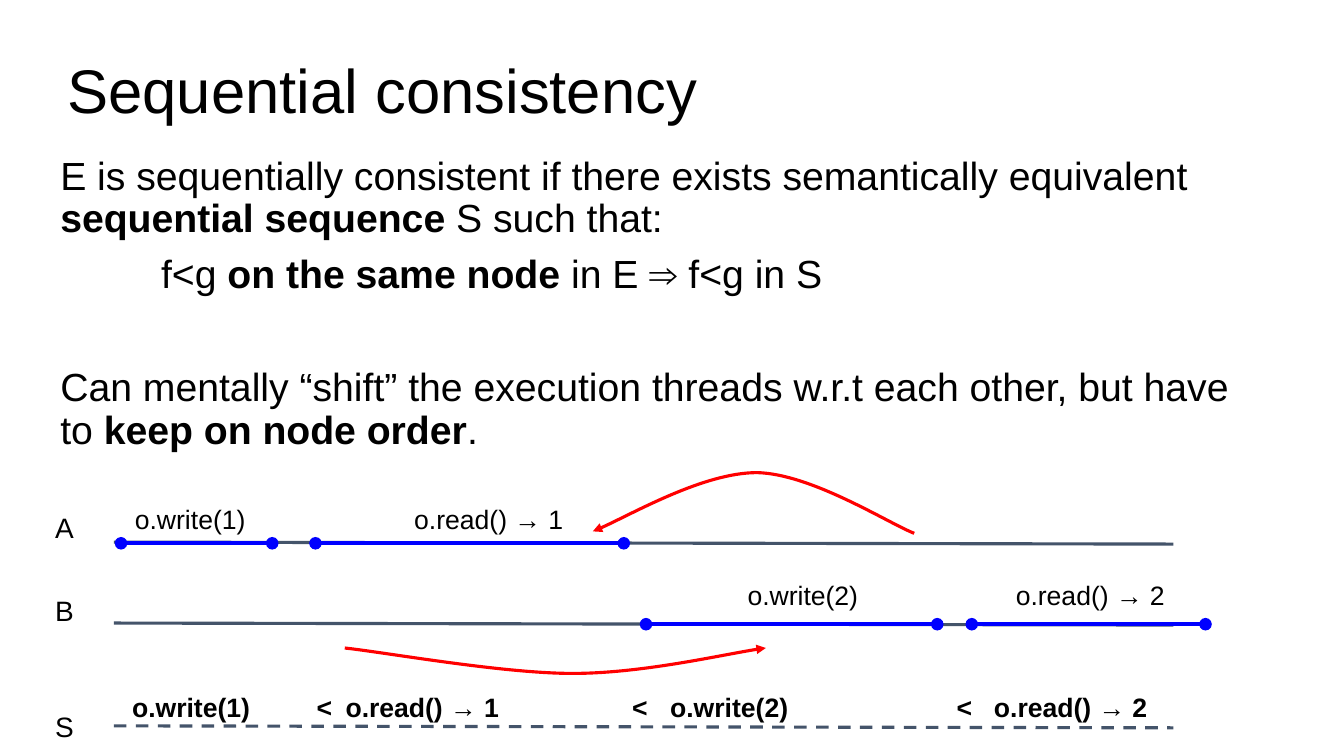
from dataclasses import dataclass

from lxml.etree import SubElement
from pptx import Presentation
from pptx.dml.color import RGBColor
from pptx.dml.line import LineFormat
from pptx.enum.dml import MSO_LINE
from pptx.enum.shapes import MSO_CONNECTOR
from pptx.enum.text import MSO_ANCHOR
from pptx.oxml.ns import qn
from pptx.slide import Slide
from pptx.text.text import TextFrame, _Paragraph
from pptx.util import Cm, Pt


@dataclass(frozen=True)
class Theme:
    font: str = "Arial"
    ink: RGBColor = RGBColor(0, 0, 0)
    axis: RGBColor = RGBColor(0x44, 0x54, 0x6A)
    operation: RGBColor = RGBColor(0, 0, 0xFF)
    shift: RGBColor = RGBColor(0xFF, 0, 0)
    title_size: float = 44
    body_size: float = 28
    lane_size: float = 20
    label_size: float = 19
    thin: float = 2.25
    thick: float = 3


@dataclass(frozen=True)
class Span:
    text: str
    bold: bool = False


@dataclass(frozen=True)
class Statement:
    spans: tuple[Span, ...]
    space_before: float = 0
    indent: float = 0


@dataclass(frozen=True)
class Operation:
    label: str
    start: float
    end: float
    label_left: float
    label_width: float


@dataclass(frozen=True)
class Lane:
    name: str
    name_top: float
    axis_top: float
    label_top: float
    operations: tuple[Operation, ...] = ()
    dashed: bool = False


THEME = Theme()
AXIS_LEFT, AXIS_RIGHT, AXIS_DROP = 2.87, 29.57, 0.05
MARGIN = 0.25

STATEMENTS = (
    Statement((
        Span("E is sequentially consistent if there exists semantically equivalent "),
        Span("sequential sequence ", True),
        Span("S such that:"),
    )),
    Statement((
        Span("f<g "),
        Span("on the same node", True),
        Span(" in E ⇒ f<g in S"),
    ), space_before=10, indent=1.27),
    Statement((
        Span("Can mentally “shift” the execution threads w.r.t each other, but have to "),
        Span("keep on node order", True),
        Span("."),
    ), space_before=50.5),
)

LANES = (
    Lane("A", 12.62, 13.66, 12.42, (
        Operation("o.write(1)", 3.05, 6.86, 3.15, 3.58),
        Operation("o.read() → 1", 7.95, 15.72, 10.19, 4.75),
    )),
    Lane("B", 14.71, 15.7, 14.33, (
        Operation("o.write(2)", 16.28, 23.62, 18.59, 3.58),
        Operation("o.read() → 2", 24.49, 30.38, 25.35, 4.39),
    )),
    Lane("S", 17.63, 18.29, 17.15, dashed=True),
)

SERIAL_ORDER = ("o.write(1)", "<", "o.read() → 1", "<", "o.write(2)", "<", "o.read() → 2")
SERIAL_TABS = (4.65, 5.38, 12.6, 13.56, 20.78, 21.72)

SHIFT_CURVES = (
    ((23.04, 13.44), (22.38, 13.18), (20.45, 11.94), (19.08, 11.91),
     (17.73, 11.91), (15.62, 13.13), (14.94, 13.39)),
    ((8.69, 16.33), (9.65, 16.43), (12.65, 16.97), (14.43, 16.97),
     (16.18, 16.97), (18.49, 16.43), (19.3, 16.33)),
)


def add_box(page: Slide, left: float, top: float, width: float, height: float,
            margin: float = MARGIN) -> TextFrame:
    frame = page.shapes.add_textbox(Cm(left), Cm(top), Cm(width), Cm(height)).text_frame
    frame.word_wrap = True
    frame.margin_left = frame.margin_right = Cm(margin)
    frame.margin_top = frame.margin_bottom = Cm(margin)
    return frame


def add_span(para: _Paragraph, text: str, size: float, bold: bool = False) -> None:
    span = para.add_run()
    span.text = text
    span.font.name = THEME.font
    span.font.size = Pt(size)
    span.font.bold = bold
    span.font.color.rgb = THEME.ink


def style_line(line: LineFormat, color: RGBColor, width: float) -> None:
    line.color.rgb = color
    line.width = Pt(width)


def add_line(page: Slide, left: float, right: float, top: float, bottom: float,
             color: RGBColor, width: float, dashed: bool = False, dots: bool = False) -> None:
    connector = page.shapes.add_connector(
        MSO_CONNECTOR.STRAIGHT, Cm(left), Cm(top), Cm(right), Cm(bottom))
    style_line(connector.line, color, width)
    if dashed:
        connector.line.dash_style = MSO_LINE.DASH
    properties = connector._element.spPr
    if dots:
        for end in ("a:headEnd", "a:tailEnd"):
            SubElement(properties.find(qn("a:ln")), qn(end), type="oval")
    SubElement(properties, qn("a:effectLst"))


def add_curve(page: Slide, points: tuple[tuple[float, float], ...]) -> None:
    start, *rest = [(Cm(x), Cm(y)) for x, y in points]
    builder = page.shapes.build_freeform(*start)
    builder.add_line_segments(rest, close=False)
    curve = builder.convert_to_shape()
    curve.shadow.inherit = False
    curve.fill.background()
    style_line(curve.line, THEME.shift, THEME.thin)
    properties = curve._element.spPr
    SubElement(properties.find(qn("a:ln")), qn("a:tailEnd"), type="triangle")
    segments = list(properties.iter(qn("a:lnTo")))
    outline = segments[0].getparent()
    for first in range(0, len(segments), 3):
        bezier = SubElement(outline, qn("a:cubicBezTo"))
        for segment in segments[first:first + 3]:
            bezier.append(segment[0])
            outline.remove(segment)


def add_lane(page: Slide, lane: Lane) -> None:
    add_line(page, AXIS_LEFT, AXIS_RIGHT, lane.axis_top, lane.axis_top + AXIS_DROP,
             THEME.axis, THEME.thin, dashed=lane.dashed)
    name = add_box(page, 1.14, lane.name_top, 1.45, 1.37)
    add_span(name.paragraphs[0], lane.name, THEME.lane_size)
    for operation in lane.operations:
        add_line(page, operation.start, operation.end, lane.axis_top + 0.03,
                 lane.axis_top + 0.03, THEME.operation, THEME.thick, dots=True)
        label = add_box(page, operation.label_left, lane.label_top,
                        operation.label_width, 1.32)
        add_span(label.paragraphs[0], operation.label, THEME.label_size)


def add_statements(page: Slide) -> None:
    frame = add_box(page, 1.52, 3.94, 30.48, 7.98, margin=0)
    for index, statement in enumerate(STATEMENTS):
        para = frame.add_paragraph() if index else frame.paragraphs[0]
        para.line_spacing = 0.9
        para.space_before = Pt(statement.space_before)
        if statement.indent:
            properties = para._p.get_or_add_pPr()
            for side in ("marL", "indent"):
                properties.set(side, str(Cm(statement.indent)))
        for span in statement.spans:
            add_span(para, span.text, THEME.body_size, span.bold)


def add_serial_order(page: Slide, top: float) -> None:
    frame = add_box(page, AXIS_LEFT, top, 28.78, 1.32)
    frame.margin_left = Cm(0.46)
    para = frame.paragraphs[0]
    tabs = SubElement(para._p.get_or_add_pPr(), qn("a:tabLst"))
    for position in SERIAL_TABS:
        SubElement(tabs, qn("a:tab"), pos=str(Cm(position)), algn="l")
    add_span(para, "\t".join(SERIAL_ORDER), THEME.label_size, bold=True)


def main() -> None:
    deck = Presentation()
    deck.slide_width, deck.slide_height = Cm(33.87), Cm(19.05)
    page = deck.slides.add_slide(deck.slide_layouts[6])
    title = add_box(page, 1.7, 0.76, 30.48, 3.18, margin=0)
    title.vertical_anchor = MSO_ANCHOR.MIDDLE
    title.paragraphs[0].line_spacing = 0.9
    add_span(title.paragraphs[0], "Sequential consistency", THEME.title_size)
    add_statements(page)
    for lane in LANES:
        add_lane(page, lane)
    add_serial_order(page, LANES[-1].label_top)
    for points in SHIFT_CURVES:
        add_curve(page, points)
    deck.save("out.pptx")


if __name__ == "__main__":
    main()
